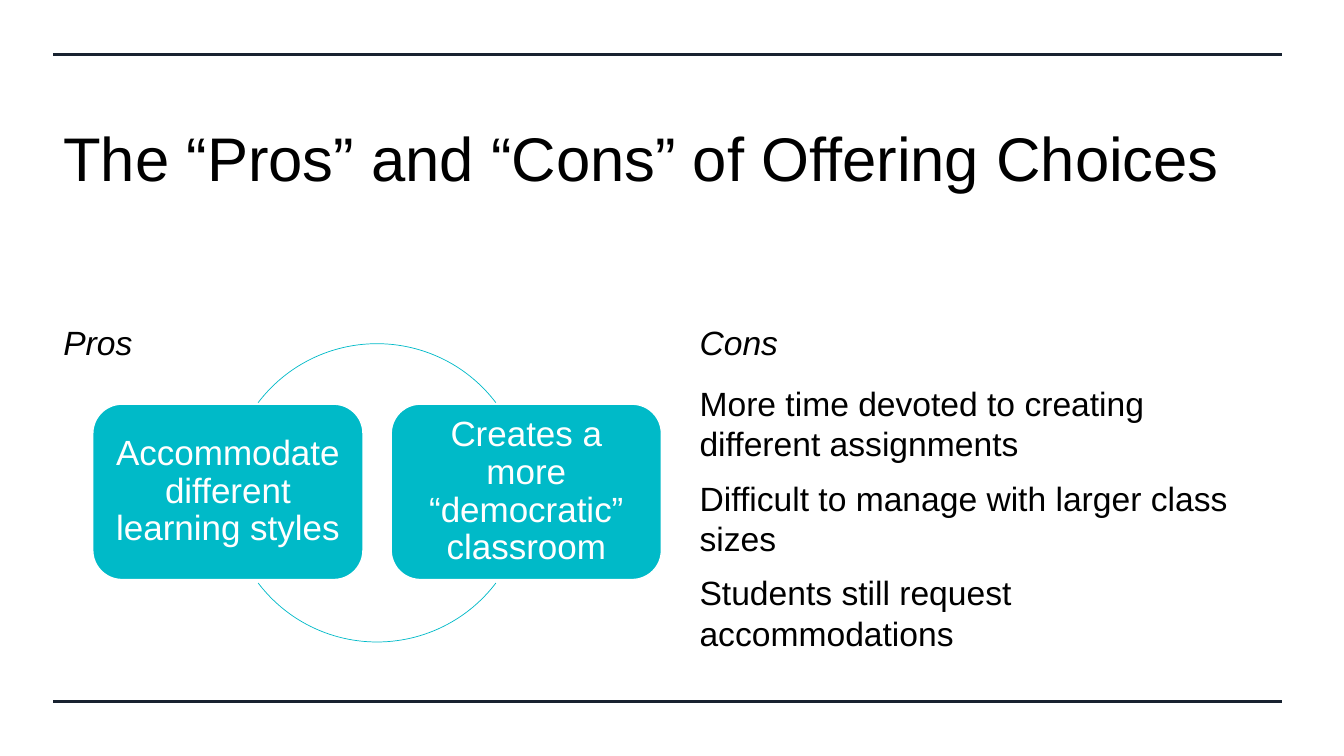
from lxml.etree import SubElement
from pptx import Presentation
from pptx.dml.color import RGBColor
from pptx.enum.shapes import MSO_CONNECTOR, MSO_SHAPE
from pptx.enum.text import MSO_ANCHOR, PP_ALIGN
from pptx.oxml.ns import qn
from pptx.util import Inches, Pt

COLORS = {"rule": "182230", "teal": "00BAC8", "text": "000000", "white": "FFFFFF"}
WIDTH, HEIGHT = 13.33, 7.5
MARGIN, CONTENT_WIDTH = 0.53, 12.19
CONS_LEFT, COLUMN_WIDTH = 6.84, 5.88
HEADING_HEIGHT = 0.9


def color(name):
    return RGBColor.from_string(COLORS[name])


def write(shape, lines, size=24, ink="text", italic=False, anchor=MSO_ANCHOR.BOTTOM,
          align=PP_ALIGN.LEFT, spacing=1.0, before=0, inset=(0.1, 0.05)):
    frame = shape.text_frame
    frame.word_wrap = True
    frame.vertical_anchor = anchor
    frame.margin_left = frame.margin_right = Inches(inset[0])
    frame.margin_top = frame.margin_bottom = Inches(inset[1])
    for index, line in enumerate(lines):
        para = frame.add_paragraph() if index else frame.paragraphs[0]
        para.alignment = align
        para.line_spacing = spacing
        para.space_before = Pt(before)
        span = para.add_run()
        span.text = line
        span.font.name = "Arial"
        span.font.size = Pt(size)
        span.font.italic = italic
        span.font.color.rgb = color(ink)


deck = Presentation()
deck.slide_width, deck.slide_height = Inches(WIDTH), Inches(HEIGHT)
page = deck.slides.add_slide(deck.slide_layouts[6])

for top in (0.54, HEIGHT - 0.54):
    rule = page.shapes.add_connector(
        MSO_CONNECTOR.STRAIGHT, Inches(MARGIN), Inches(top),
        Inches(MARGIN + CONTENT_WIDTH), Inches(top))
    rule.line.color.rgb = color("rule")
    rule.line.width = Pt(2.25)
    SubElement(rule._element.spPr, qn("a:effectLst"))

title = page.shapes.add_textbox(
    Inches(MARGIN), Inches(1.07), Inches(CONTENT_WIDTH), Inches(HEADING_HEIGHT))
write(title, ["The “Pros” and “Cons” of Offering Choices"], size=44)

for left, heading in ((MARGIN, "Pros"), (CONS_LEFT, "Cons")):
    box = page.shapes.add_textbox(
        Inches(left), Inches(2.74), Inches(COLUMN_WIDTH), Inches(HEADING_HEIGHT))
    write(box, [heading], italic=True, before=10)

CARD_LEFT, CARD_TOP, CARD_WIDTH, CARD_HEIGHT, CARD_STEP = 0.92, 4.01, 2.68, 1.74, 2.96
pros = ["Accommodate different learning styles", "Creates a more “democratic” classroom"]
for column, pro in enumerate(pros):
    card = page.shapes.add_shape(
        MSO_SHAPE.ROUNDED_RECTANGLE, Inches(CARD_LEFT + column * CARD_STEP),
        Inches(CARD_TOP), Inches(CARD_WIDTH), Inches(CARD_HEIGHT))
    card.shadow.inherit = False
    card.fill.solid()
    card.fill.fore_color.rgb = color("teal")
    card.line.color.rgb = color("white")
    card.line.width = Pt(1)
    write(card, [pro], size=25, ink="white", anchor=MSO_ANCHOR.MIDDLE,
          align=PP_ALIGN.CENTER, spacing=0.9, inset=(0.1, 0.1))

DEGREE = 0.6
for start, end in ((217.2, 322.8), (37.2, 142.8)):
    arc = page.shapes.add_shape(
        MSO_SHAPE.ARC, Inches(2.26), Inches(3.41), Inches(CARD_STEP), Inches(CARD_STEP))
    arc.adjustments[0] = start * DEGREE
    arc.adjustments[1] = end * DEGREE
    arc.shadow.inherit = False
    arc.fill.background()
    arc.line.color.rgb = color("teal")
    arc.line.width = Pt(0.5)

cons = page.shapes.add_textbox(
    Inches(CONS_LEFT), Inches(3.75), Inches(COLUMN_WIDTH), Inches(3.02))
write(cons, [
    "More time devoted to creating different assignments",
    "Difficult to manage with larger class sizes",
    "Students still request accommodations",
], anchor=MSO_ANCHOR.TOP, before=10)

deck.save("out.pptx")
